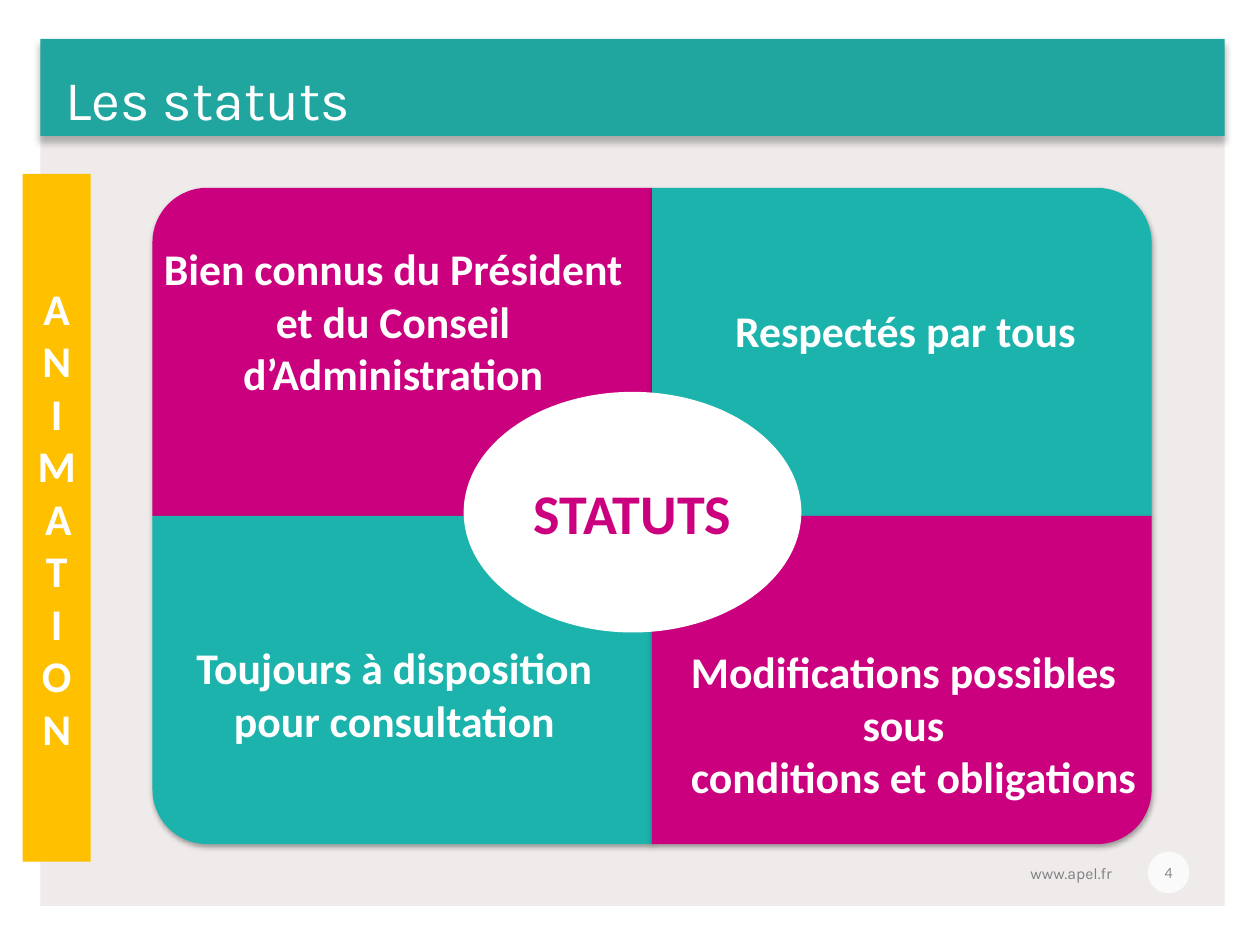
from dataclasses import dataclass
from math import cos, pi, sin

from lxml.etree import SubElement
from pptx import Presentation
from pptx.dml.color import RGBColor
from pptx.enum.shapes import MSO_SHAPE as Preset
from pptx.enum.text import MSO_ANCHOR as Anchor, PP_ALIGN as Align
from pptx.oxml.ns import qn
from pptx.util import Inches, Pt

COLUMNS, ROWS = 100, 75
UNIT = Inches(0.1)


@dataclass(frozen=True)
class Theme:
    """Colours, fonts and type sizes of the slide."""
    panel: str = "EFEBEB"
    header: str = "20A69E"
    teal: str = "1CB3AC"
    magenta: str = "CB007E"
    amber: str = "FFC000"
    white: str = "FFFFFF"
    address: str = "808080"
    number: str = "8C8C8C"
    display: str = "Karla"
    body: str = "Calibri"
    large: int = 32
    medium: int = 25
    small: int = 9


THEME = Theme()


@dataclass(frozen=True)
class Box:
    """A rectangle in grid columns and rows."""
    left: float
    top: float
    width: float
    height: float

    def inner(self, left, top, width, height):
        """Return a box placed relative to this one."""
        return Box(self.left + left, self.top + top, width, height)

    def lengths(self):
        """Return the box as slide lengths."""
        return [round(n * UNIT) for n in (self.left, self.top, self.width, self.height)]


def paint(shape, color, alpha=None, shadow=None):
    """Fill a shape without outline, with optional opacity and shadow."""
    shape.shadow.inherit = False
    shape.fill.solid()
    shape.fill.fore_color.rgb = RGBColor.from_string(color)
    shape.line.fill.background()
    properties = shape._element.spPr
    if alpha:
        fill = properties.find(qn("a:solidFill"))[0]
        SubElement(fill, qn("a:alpha"), val=str(alpha * 1000))
    if shadow:
        tint, opacity, blur, distance, angle = shadow
        outer = SubElement(properties.find(qn("a:effectLst")), qn("a:outerShdw"),
                           blurRad=str(int(Pt(blur))), dist=str(int(Pt(distance))),
                           dir=str(angle * 60000), rotWithShape="0")
        value = SubElement(outer, qn("a:srgbClr"), val=tint)
        SubElement(value, qn("a:alpha"), val=str(opacity * 1000))


def write(shape, lines, size, color, font=THEME.body, bold=False,
          align=Align.CENTER, anchor=Anchor.MIDDLE, wrap=True):
    """Write one paragraph for each line."""
    frame = shape.text_frame
    frame.word_wrap = wrap
    frame.vertical_anchor = anchor
    frame.text = "\n".join(lines)
    for paragraph in frame.paragraphs:
        paragraph.alignment = align
        paragraph.font.name = font
        paragraph.font.size = Pt(size)
        paragraph.font.bold = bold
        paragraph.font.color.rgb = RGBColor.from_string(color)
    return frame


def add_block(slide, box, preset, color, **effects):
    """Add a filled preset shape."""
    shape = slide.shapes.add_shape(preset, *box.lengths())
    paint(shape, color, **effects)
    return shape


def add_text(slide, box, lines, size, color, **style):
    """Add a text box."""
    return write(slide.shapes.add_textbox(*box.lengths()), lines, size, color, **style)


def add_header(slide, box):
    """Place the title band."""
    add_block(slide, box, Preset.RECTANGLE, THEME.header, shadow=("595959", 43, 4, 3, 96))
    add_text(slide, box.inner(1, 1.5, 79.9, 4.6), ["Les statuts"], THEME.large, THEME.white,
             font=THEME.display, align=Align.LEFT, anchor=Anchor.TOP)


def add_footer(slide, box):
    """Place the web address and the slide number."""
    add_block(slide, box.inner(10.3, 0.4, 3.3, 3.3), Preset.OVAL, THEME.white, alpha=78)
    add_text(slide, box.inner(0, 0.9, 10.6, 3.3), ["www.apel.fr"], THEME.small, THEME.address,
             font=THEME.display, align=Align.LEFT, anchor=Anchor.TOP)
    add_text(slide, box.inner(9.7, 0, 4.5, 4), ["4"], THEME.small, THEME.number)


def add_side_band(slide, box):
    """Place the band with stacked letters."""
    band = add_block(slide, box, Preset.RECTANGLE, THEME.amber)
    frame = write(band, ["ANIMATION"], THEME.medium, THEME.white, bold=True)
    frame._txBody.bodyPr.set("vert", "wordArtVert")


def add_quadrant(slide, box, side, level, color, radius=4.35, steps=16):
    """Draw a quarter of the board, rounded at its outer corner."""
    center_x, center_y = box.left + box.width / 2, box.top + box.height / 2
    outer_x = center_x + side * box.width / 2
    outer_y = center_y + level * box.height / 2
    angles = [pi / 2 * step / steps for step in range(steps + 1)]
    arc = [(outer_x - side * radius * (1 - cos(angle)),
            outer_y - level * radius * (1 - sin(angle))) for angle in angles]
    points = [(outer_x, center_y), *arc, (center_x, outer_y)]
    builder = slide.shapes.build_freeform(round(center_x * UNIT), round(center_y * UNIT))
    builder.add_line_segments([(round(x * UNIT), round(y * UNIT)) for x, y in points])
    paint(builder.convert_to_shape(), color, shadow=("000000", 35, 3.1, 1.8, 90))


def add_board(slide, box):
    """Place the four quadrants, the central oval and the labels."""
    for level in (-1, 1):
        for side in (-1, 1):
            color = THEME.magenta if side == level else THEME.teal
            add_quadrant(slide, box, side, level, color)
    oval = add_block(slide, box.inner(24.7, 16.2, 26.8, 19.1), Preset.OVAL, THEME.white)
    write(oval, ["STATUTS"], THEME.large, THEME.magenta, bold=True)
    labels = [
        ((-1.1, 3.8, 40.4, 13.6), True,
         ["Bien connus du Président et du Conseil d’Administration"]),
        ((44.3, 8.7, 30.9, 5.2), False, ["Respectés par tous"]),
        ((39.9, 35.8, 39.4, 13.6), False,
         ["Modifications possibles", "sous", "conditions et obligations"]),
        ((1.9, 35.5, 34.6, 9.4), False, ["Toujours à disposition", "pour consultation"]),
    ]
    for place, wrap, lines in labels:
        frame = add_text(slide, box.inner(*place), lines, THEME.medium, THEME.white,
                         bold=True, anchor=Anchor.TOP, wrap=wrap)
        if len(lines) == 3:
            indent = frame.paragraphs[-1]._p.get_or_add_pPr()
            indent.set("marL", str(int(Inches(0.16))))


def main():
    """Build and save the slide."""
    presentation = Presentation()
    presentation.slide_width, presentation.slide_height = COLUMNS * UNIT, ROWS * UNIT
    slide = presentation.slides.add_slide(presentation.slide_layouts[6])
    page = Box(0, 0, COLUMNS, ROWS)
    add_block(slide, page.inner(3.2, 3.2, 94, 68.7), Preset.RECTANGLE, THEME.panel)
    add_header(slide, page.inner(3.2, 3.1, 94, 7.7))
    add_footer(slide, page.inner(80.8, 67.2, 14.2, 4))
    add_side_band(slide, page.inner(1.8, 13.8, 5.4, 54.6))
    add_board(slide, page.inner(12.1, 14.9, 79.3, 52.1))
    presentation.save("out.pptx")


if __name__ == "__main__":
    main()
